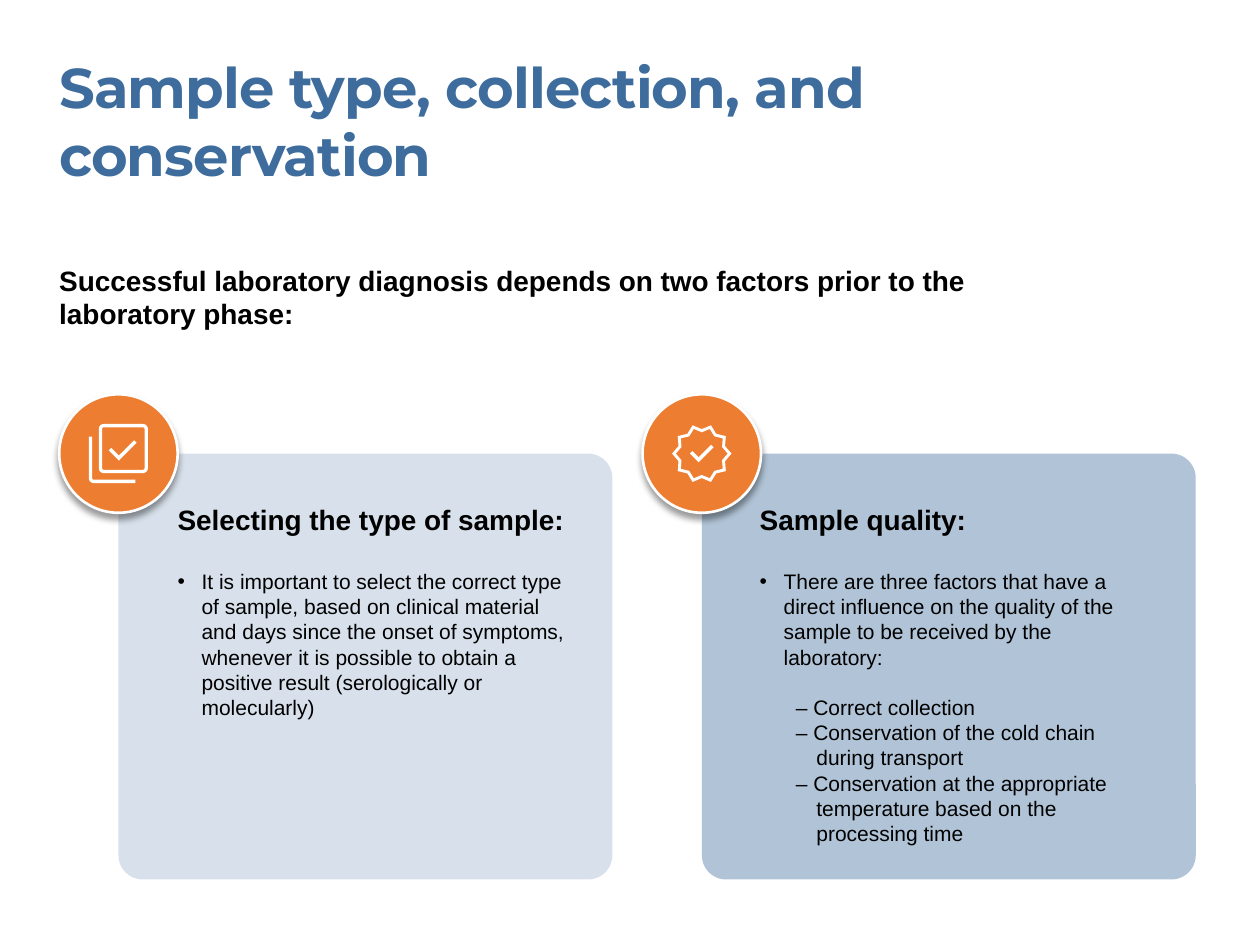
from math import cos, sin, radians

from pptx import Presentation
from pptx.dml.color import RGBColor
from pptx.enum.shapes import MSO_SHAPE as Shape
from pptx.oxml.ns import qn
from pptx.util import Pt
from lxml.etree import SubElement

COLORS = {
    "title": "3D6C9D",
    "text": "000000",
    "card": "3D6C9D",
    "badge": "ED7D31",
    "white": "FFFFFF",
    "shadow": "000000",
}
LEFT = 33.84
BADGE_TOP = 225.36
BADGE_SIZE = 67.68
CARD_STEP = 333.36
CARD_SIZE = (282.24, 243.36)
STROKE = 1.44


def rgb(name):
    return RGBColor.from_string(COLORS[name])


def set_opacity(color_element, percent):
    SubElement(color_element, qn("a:alpha"), val=str(percent * 1000))


def fill_shape(shape, color, opacity=100):
    shape.shadow.inherit = False
    shape.fill.solid()
    shape.fill.fore_color.rgb = rgb(color)
    shape.line.fill.background()
    if opacity < 100:
        set_opacity(shape._element.spPr.find(".//" + qn("a:srgbClr")), opacity)


def add_text_box(page, left, top, width, height):
    box = page.shapes.add_textbox(Pt(left), Pt(top), Pt(width), Pt(height))
    frame = box.text_frame
    frame.word_wrap = True
    frame.margin_left = frame.margin_right = 0
    frame.margin_top = frame.margin_bottom = 0
    return frame


def write(frame, text, size=12, bold=False, font="Arial", color="text",
          spacing=0, before=0, margin=0, hanging=0, bullet=None):
    para = frame.paragraphs[0]
    if para.runs:
        para = frame.add_paragraph()
    para.space_before = Pt(before)
    properties = para._p.get_or_add_pPr()
    properties.set("marL", str(Pt(margin)))
    properties.set("indent", str(-Pt(hanging)))
    if bullet:
        SubElement(properties, qn("a:buFont"), typeface="Arial")
        SubElement(properties, qn("a:buChar"), char=bullet)
    else:
        SubElement(properties, qn("a:buNone"))
    span = para.add_run()
    span.text = text
    span.font.name = font
    span.font.size = Pt(size)
    span.font.bold = bold
    span.font.color.rgb = rgb(color)
    if spacing:
        span._r.get_or_add_rPr().set("spc", str(int(spacing * 100)))


def add_card(page, left, top, opacity):
    width, height = CARD_SIZE
    card = page.shapes.add_shape(
        Shape.ROUNDED_RECTANGLE, Pt(left), Pt(top), Pt(width), Pt(height))
    card.adjustments[0] = 0.057
    fill_shape(card, "card", opacity)


def add_badge(page, left, top):
    badge = page.shapes.add_shape(
        Shape.OVAL, Pt(left), Pt(top), Pt(BADGE_SIZE), Pt(BADGE_SIZE))
    fill_shape(badge, "badge")
    badge.line.color.rgb = rgb("white")
    badge.line.width = Pt(1.5)
    effects = badge._element.spPr.find(qn("a:effectLst"))
    shadow = SubElement(effects, qn("a:outerShdw"), blurRad=str(Pt(4)),
                        dist=str(Pt(3)), dir="5400000", algn="t", rotWithShape="0")
    set_opacity(SubElement(shadow, qn("a:srgbClr"), val=COLORS["shadow"]), 40)


def add_icon(page, center_x, center_y, contours):
    scaled = [[(x * 100, y * 100) for x, y in contour] for contour in contours]
    builder = page.shapes.build_freeform(*scaled[0][0], scale=127)
    for number, contour in enumerate(scaled):
        if number:
            builder.move_to(*contour[0])
        builder.add_line_segments(contour[1:], close=True)
    fill_shape(builder.convert_to_shape(Pt(center_x), Pt(center_y)), "white")


def arc(x, y, radius, start, end):
    steps = 6
    angles = [radians(start + (end - start) * i / steps) for i in range(steps + 1)]
    return [(x + radius * cos(a), y + radius * sin(a)) for a in angles]


def rounded_square(x, y, half, radius):
    inset = half - radius
    corners = [(1, 1), (-1, 1), (-1, -1), (1, -1)]
    return [point for i, (sx, sy) in enumerate(corners)
            for point in arc(x + sx * inset, y + sy * inset, radius, 90 * i, 90 * i + 90)]


def check_mark(x, y, short, long):
    return [(x, y), (x + long, y - long), (x + long - STROKE, y - long - STROKE),
            (x, y - 2 * STROKE), (x - short + STROKE, y - short - STROKE),
            (x - short, y - short)]


def star(tip, notch):
    radii = [tip, notch] * 10
    return [(r * cos(radians(18 * i)), r * sin(radians(18 * i)))
            for i, r in enumerate(radii)]


def selection_contours():
    edge, end, band, radius = 16.9, 9.7, 1.9, 2.9
    corner = edge - radius
    bracket = [(end, edge), *arc(-corner, corner, radius, 90, 180), (-edge, -end),
               (band - edge, -end), *arc(-corner, corner, radius - band, 180, 90),
               (end, edge - band)]
    return [rounded_square(2.85, -2.85, 14.05, radius),
            rounded_square(2.85, -2.85, 12.15, radius - band),
            check_mark(0.36, 4, 5.8, 10.1), bracket]


def quality_contours():
    return [star(17, 14), star(14.8, 12.2), check_mark(-1.8, 5, 5, 8.6)]


def main():
    deck = Presentation()
    deck.slide_width, deck.slide_height = Pt(720), Pt(540)
    page = deck.slides.add_slide(deck.slide_layouts[6])

    title = add_text_box(page, LEFT, 30.24, 615.6, 77.76)
    write(title, "Sample type, collection, and conservation", size=32, bold=True,
          font="Montserrat", color="title", spacing=-0.5)
    intro = add_text_box(page, LEFT, 150.48, 519.84, 38.88)
    write(intro, "Successful laboratory diagnosis depends on two factors prior to the "
          "laboratory phase:", size=16, bold=True)

    radius = BADGE_SIZE / 2
    center_y = BADGE_TOP + radius
    cards = [(20, selection_contours()), (40, quality_contours())]
    for number, (opacity, contours) in enumerate(cards):
        left = LEFT + number * CARD_STEP
        add_card(page, left + radius, center_y, opacity)
        add_badge(page, left, BADGE_TOP)
        add_icon(page, left + radius, center_y, contours)

    bullet = dict(before=18.4, margin=13.68, hanging=13.68, bullet="•")
    selection = add_text_box(page, 101.52, 287.28, 224.64, 126)
    write(selection, "Selecting the type of sample:", size=16, bold=True)
    write(selection, "It is important to select the correct type of sample, based on "
          "clinical material and days since the onset of symptoms, whenever it is "
          "possible to obtain a positive result (serologically or molecularly)", **bullet)

    quality = add_text_box(page, 434.16, 287.28, 226.08, 198.72)
    write(quality, "Sample quality:", size=16, bold=True)
    write(quality, "There are three factors that have a direct influence on the quality "
          "of the sample to be received by the laboratory:", **bullet)
    factors = ["Correct collection",
               "Conservation of the cold chain during transport",
               "Conservation at the appropriate temperature based on the processing time"]
    for number, factor in enumerate(factors):
        write(quality, f"– {factor}", before=0 if number else 14.4,
              margin=32.4, hanging=11.8)

    deck.save("out.pptx")


if __name__ == "__main__":
    main()
